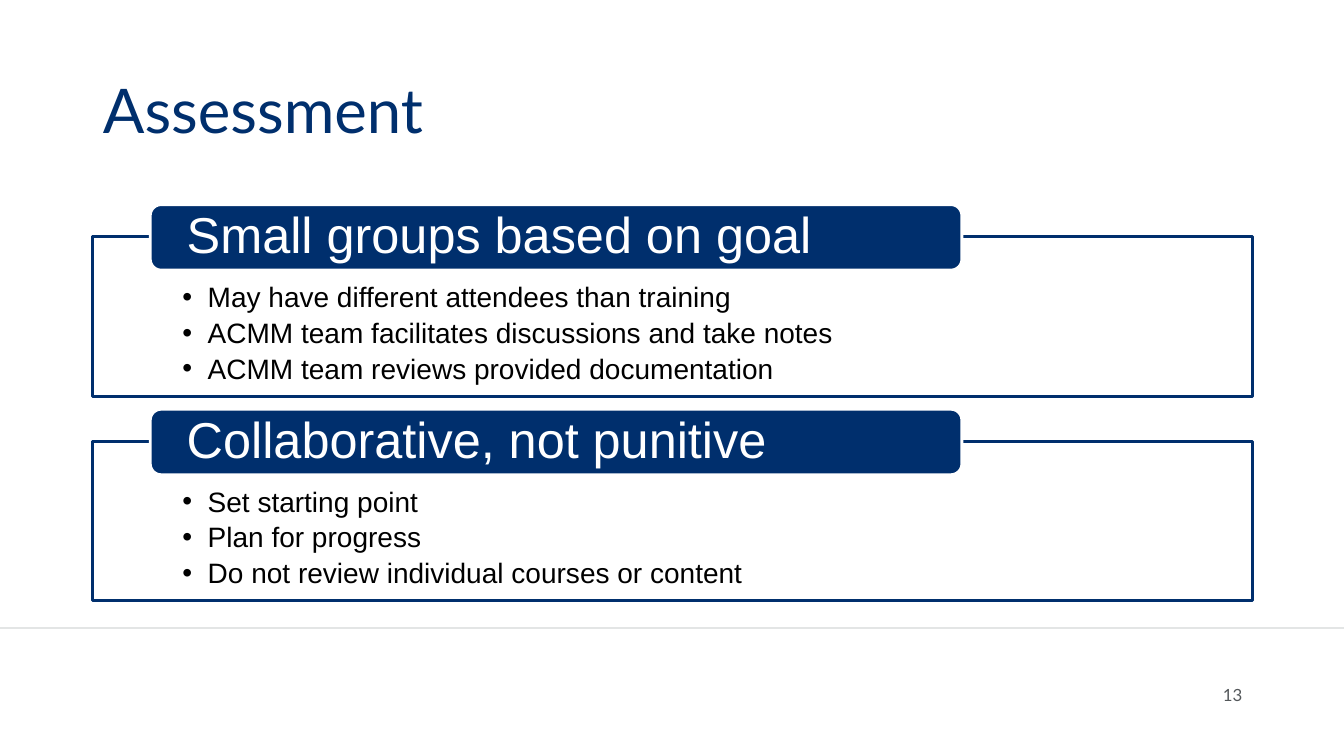
from dataclasses import dataclass

from lxml.etree import SubElement
from pptx import Presentation
from pptx.dml.color import RGBColor
from pptx.enum.shapes import MSO_CONNECTOR, MSO_SHAPE
from pptx.enum.text import MSO_ANCHOR, MSO_AUTO_SIZE, PP_ALIGN
from pptx.oxml.ns import qn
from pptx.util import Inches, Pt


@dataclass(frozen=True)
class Theme:
    """Colours, fonts and type sizes of the slide."""
    navy: RGBColor = RGBColor.from_string("002F6D")
    white: RGBColor = RGBColor.from_string("FFFFFF")
    black: RGBColor = RGBColor.from_string("000000")
    grey: RGBColor = RGBColor.from_string("53575A")
    rule: RGBColor = RGBColor.from_string("E3E5E5")
    heading_font: str = "Lato"
    body_font: str = "Arial"
    title_size: int = 44
    tag_size: int = 36
    bullet_size: int = 20
    number_size: int = 12


THEME = Theme()
LEFT, WIDTH = 0.92, 11.5
FIRST_PANEL_TOP, PANEL_PITCH = 2.35, 2.03
TOPICS = [
    ("Small groups based on goal", [
        "May have different attendees than training",
        "ACMM team facilitates discussions and take notes",
        "ACMM team reviews provided documentation",
    ]),
    ("Collaborative, not punitive", [
        "Set starting point",
        "Plan for progress",
        "Do not review individual courses or content",
    ]),
]


def style_paragraph(para, text, font, size, color, align=PP_ALIGN.LEFT, spacing=0.9):
    """Fill a paragraph with text and set its look."""
    para.text = text
    para.alignment = align
    para.line_spacing = spacing
    para.font.name = font
    para.font.size = Pt(size)
    para.font.color.rgb = color


def set_frame(frame, anchor, side=0.1, top=0.05, bottom=0.05):
    """Set wrapping, anchor and insets of a text frame."""
    frame.word_wrap = True
    frame.auto_size = MSO_AUTO_SIZE.NONE
    frame.vertical_anchor = anchor
    frame.margin_left = frame.margin_right = Inches(side)
    frame.margin_top, frame.margin_bottom = Inches(top), Inches(bottom)


def add_bullet(para):
    """Give a paragraph a round bullet with a hanging indent."""
    properties = para._p.get_or_add_pPr()
    properties.set("marL", str(Inches(0.25)))
    properties.set("indent", str(-Inches(0.25)))
    color = SubElement(properties, qn("a:buClr"))
    SubElement(color, qn("a:srgbClr"), val=str(THEME.black))
    SubElement(properties, qn("a:buFont"), typeface=THEME.body_font)
    SubElement(properties, qn("a:buChar"), char="•")


def add_box(page, kind, left, top, width, height, fill, line):
    """Add a filled, outlined shape without shadow."""
    box = page.shapes.add_shape(kind, Inches(left), Inches(top), Inches(width), Inches(height))
    box.shadow.inherit = False
    box.fill.solid()
    box.fill.fore_color.rgb = fill
    box.line.color.rgb = line
    box.line.width = Pt(2)
    return box


def add_title(page, text):
    """Place and format the title placeholder."""
    title = page.shapes.title
    title.left, title.top = Inches(LEFT), Inches(0.4)
    title.width, title.height = Inches(WIDTH), Inches(1.45)
    set_frame(title.text_frame, MSO_ANCHOR.MIDDLE)
    style_paragraph(title.text_frame.paragraphs[0], text, THEME.heading_font,
                    THEME.title_size, THEME.navy)


def add_topic(page, top, heading, points):
    """Add an outlined panel of bullets with a heading tag on its top edge."""
    panel = add_box(page, MSO_SHAPE.RECTANGLE, LEFT, top, WIDTH, 1.58, THEME.white, THEME.navy)
    frame = panel.text_frame
    set_frame(frame, MSO_ANCHOR.TOP, side=0.89, top=0.46, bottom=0.16)
    for index, point in enumerate(points):
        para = frame.add_paragraph() if index else frame.paragraphs[0]
        add_bullet(para)
        style_paragraph(para, point, THEME.body_font, THEME.bullet_size, THEME.black)
        para.space_after = Pt(4)

    tag = add_box(page, MSO_SHAPE.ROUNDED_RECTANGLE, 1.49, top - 0.32, 8.05, 0.65,
                  THEME.navy, THEME.white)
    set_frame(tag.text_frame, MSO_ANCHOR.MIDDLE, side=0.33, top=0, bottom=0)
    style_paragraph(tag.text_frame.paragraphs[0], heading, THEME.body_font,
                    THEME.tag_size, THEME.white)


def add_footer(page, number):
    """Add the footer rule and the page number."""
    rule = page.shapes.add_connector(MSO_CONNECTOR.STRAIGHT, Inches(0), Inches(6.23),
                                     Inches(13.33), Inches(6.23))
    rule.line.color.rgb = THEME.rule
    rule.line.width = Pt(1)
    SubElement(rule._element.spPr, qn("a:effectLst"))
    box = page.shapes.add_textbox(Inches(9.42), Inches(6.69), Inches(3), Inches(0.4))
    set_frame(box.text_frame, MSO_ANCHOR.MIDDLE)
    style_paragraph(box.text_frame.paragraphs[0], number, THEME.heading_font,
                    THEME.number_size, THEME.grey, PP_ALIGN.RIGHT, 1.0)


def main():
    """Build the assessment slide and save it."""
    deck = Presentation()
    deck.slide_width, deck.slide_height = Inches(13.33), Inches(7.5)
    page = deck.slides.add_slide(deck.slide_layouts[5])
    add_title(page, "Assessment")
    for index, (heading, points) in enumerate(TOPICS):
        add_topic(page, FIRST_PANEL_TOP + index * PANEL_PITCH, heading, points)
    add_footer(page, "13")
    deck.save("out.pptx")


if __name__ == "__main__":
    main()
